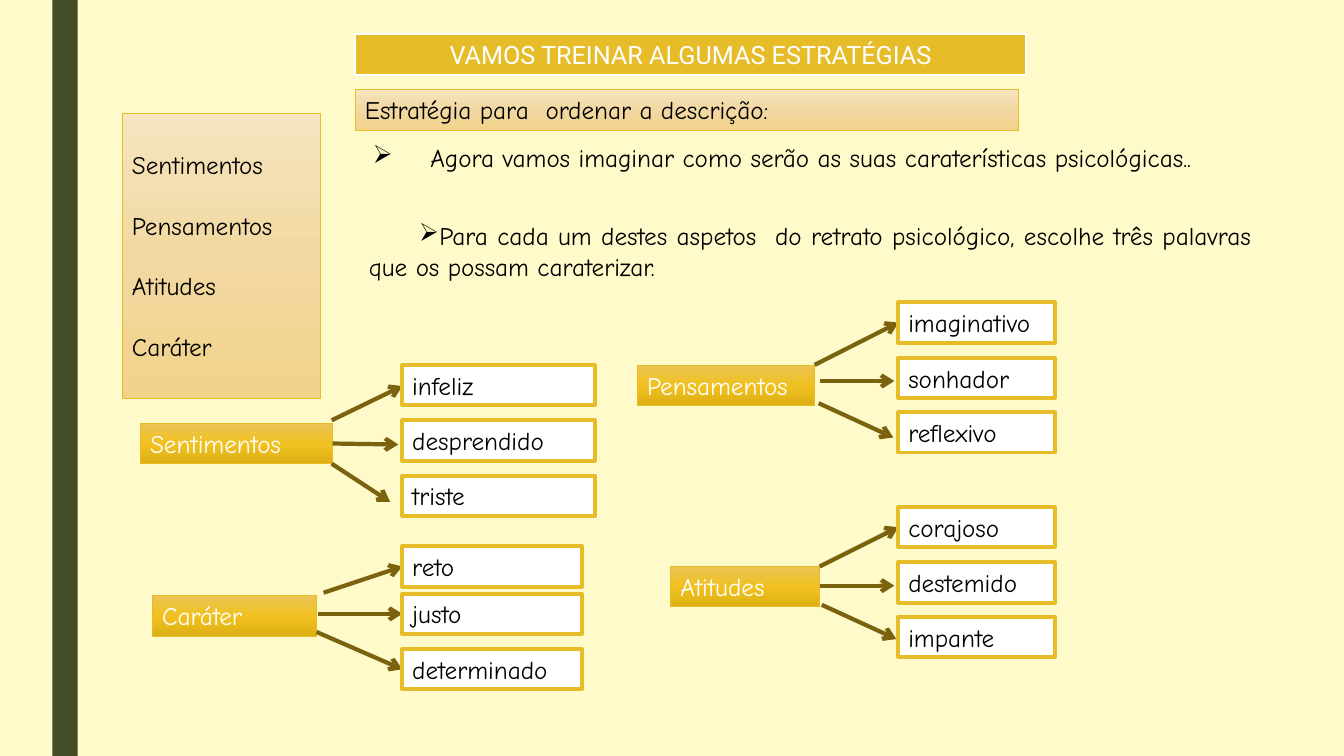
from copy import deepcopy

from lxml.etree import SubElement
from pptx import Presentation
from pptx.dml.color import RGBColor
from pptx.enum.shapes import MSO_CONNECTOR, MSO_SHAPE
from pptx.enum.text import MSO_ANCHOR, PP_ALIGN
from pptx.oxml.ns import qn
from pptx.util import Inches, Pt

CREAM = RGBColor(0xFE, 0xFA, 0xC9)
OLIVE = RGBColor(0x44, 0x4D, 0x26)
GOLD = RGBColor(0xE7, 0xBC, 0x29)
BROWN = RGBColor(0x7A, 0x62, 0x0E)
WHITE = RGBColor(0xFF, 0xFF, 0xFF)
BLACK = RGBColor(0x00, 0x00, 0x00)
PALE_GRADIENT = (RGBColor(0xF6, 0xE5, 0xC0), RGBColor(0xF2, 0xD8, 0xA2), RGBColor(0xF2, 0xD3, 0x8B))
GOLD_GRADIENT = (RGBColor(0xEB, 0xC4, 0x56), RGBColor(0xF0, 0xC1, 0x20), RGBColor(0xDE, 0xB0, 0x14))

BODY_FONT = "Comic Neue"
BOX_HEIGHT = 0.4
ASPECTS = ["Sentimentos", "Pensamentos", "Atitudes", "Caráter"]

# Label, its (left, top, width), the words' left, width and tops, arrow ends
WORD_GROUPS = [
    ("Sentimentos", (1.39, 4.2, 1.91), 3.99, 1.91,
     [("infeliz", 3.62), ("desprendido", 4.17), ("triste", 4.72)],
     [(3.29, 4.17, 3.99, 3.83), (3.3, 4.4, 3.95, 4.41), (3.29, 4.6, 3.87, 4.98)]),
    ("Pensamentos", (6.32, 3.62, 1.76), 8.91, 1.55,
     [("imaginativo", 3), ("sonhador", 3.55), ("reflexivo", 4.09)],
     [(8.08, 3.62, 8.91, 3.2), (8.13, 3.78, 8.87, 3.78), (8.12, 4, 8.86, 4.34)]),
    ("Atitudes", (6.65, 5.62, 1.48), 8.91, 1.55,
     [("corajoso", 5.03), ("destemido", 5.58), ("impante", 6.12)],
     [(8.13, 5.62, 8.91, 5.23), (8.13, 5.81, 8.87, 5.81), (8.15, 6, 8.89, 6.34)]),
    ("Caráter", (1.51, 5.91, 1.63), 3.99, 1.78,
     [("reto", 5.42), ("justo", 5.89), ("determinado", 6.44)],
     [(3.21, 5.88, 3.99, 5.62), (3.15, 6.09, 3.99, 6.09), (3.14, 6.27, 3.99, 6.64)]),
]


def format_paragraph(paragraph, color, font=BODY_FONT, align=PP_ALIGN.LEFT):
    paragraph.alignment = align
    paragraph.font.name = font
    paragraph.font.size = Pt(18)
    paragraph.font.color.rgb = color


def fill_shape(shape, colors):
    """Fill with one colour, or with a downward gradient of three."""
    if len(colors) == 1:
        shape.fill.solid()
        shape.fill.fore_color.rgb = colors[0]
        return
    shape.fill.gradient()
    shape.fill.gradient_angle = 270
    stop_list = shape._element.spPr.find(".//" + qn("a:gsLst"))
    stop_list.insert(1, deepcopy(stop_list[0]))
    for index, (stop, color) in enumerate(zip(shape.fill.gradient_stops, colors)):
        stop.position = index / 2
        stop.color.rgb = color


def add_box(slide, left, top, width, height, lines, colors, line_width, text_color=BLACK):
    shape = slide.shapes.add_shape(
        MSO_SHAPE.RECTANGLE, Inches(left), Inches(top), Inches(width), Inches(height))
    shape.shadow.inherit = False
    fill_shape(shape, colors)
    shape.line.color.rgb = GOLD
    shape.line.width = Pt(line_width)
    text_frame = shape.text_frame
    text_frame.word_wrap = True
    text_frame.vertical_anchor = MSO_ANCHOR.MIDDLE
    text_frame.text = "\n".join(lines)
    for index, paragraph in enumerate(text_frame.paragraphs):
        format_paragraph(paragraph, text_color)
        if index:
            paragraph.space_before = Pt(21.6)


def add_arrow(slide, start_x, start_y, end_x, end_y):
    connector = slide.shapes.add_connector(
        MSO_CONNECTOR.STRAIGHT, Inches(start_x), Inches(start_y), Inches(end_x), Inches(end_y))
    connector.line.color.rgb = BROWN
    connector.line.width = Pt(3)
    SubElement(connector.line._get_or_add_ln(), qn("a:tailEnd"), type="arrow")
    SubElement(connector._element.spPr, qn("a:effectLst"))


def add_bullet_text(slide, left, top, width, height, text, margin, indent, align):
    box = slide.shapes.add_textbox(Inches(left), Inches(top), Inches(width), Inches(height))
    box.text_frame.word_wrap = True
    paragraph = box.text_frame.paragraphs[0]
    paragraph.text = text
    format_paragraph(paragraph, BLACK, align=align)
    properties = paragraph._p.get_or_add_pPr()
    properties.set("marL", str(Inches(margin)))
    properties.set("indent", str(Inches(indent)))
    bullet = SubElement(properties, qn("a:buChar"), char="➢")
    properties.find(qn("a:defRPr")).addprevious(bullet)


def add_title(slide, text):
    title = slide.shapes.title
    title.left, title.top = Inches(3.52), Inches(0.34)
    title.width, title.height = Inches(6.66), Inches(BOX_HEIGHT)
    fill_shape(title, [GOLD])
    title.line.color.rgb = WHITE
    title.line.width = Pt(1.5)
    title.text_frame.text = text
    title.text_frame.vertical_anchor = MSO_ANCHOR.MIDDLE
    format_paragraph(title.text_frame.paragraphs[0], WHITE, "Roboto", PP_ALIGN.CENTER)


def add_word_group(slide, label, label_place, words_left, words_width, words, arrows):
    add_box(slide, *label_place, BOX_HEIGHT, [label], GOLD_GRADIENT, 0.5, WHITE)
    for arrow in arrows:
        add_arrow(slide, *arrow)
    for word, top in words:
        add_box(slide, words_left, top, words_width, BOX_HEIGHT, [word], [WHITE], 2.75)


def main():
    presentation = Presentation()
    presentation.slide_width = Inches(13.33)
    presentation.slide_height = Inches(7.5)
    slide = presentation.slides.add_slide(presentation.slide_layouts.get_by_name("Title Only"))

    # Background and side band
    slide.background.fill.solid()
    slide.background.fill.fore_color.rgb = CREAM
    band = slide.shapes.add_shape(
        MSO_SHAPE.RECTANGLE, Inches(0.52), 0, Inches(0.25), Inches(7.5))
    band.shadow.inherit = False
    fill_shape(band, [OLIVE])
    band.line.fill.background()

    # Headings and list of aspects
    add_title(slide, "VAMOS TREINAR ALGUMAS ESTRATÉGIAS")
    add_box(slide, 3.52, 0.89, 6.58, BOX_HEIGHT,
            ["Estratégia para  ordenar a descrição:"], PALE_GRADIENT, 0.5)
    add_box(slide, 1.21, 1.12, 1.97, 2.83, ASPECTS, PALE_GRADIENT, 0.5)

    # Instructions
    add_bullet_text(slide, 3.6, 1.36, 8.91, 0.4,
                    "Agora vamos imaginar como serão as suas caraterísticas psicológicas..",
                    0.57, -0.57, PP_ALIGN.LEFT)
    add_bullet_text(slide, 3.56, 2.14, 8.95, 0.71,
                    "Para cada um destes aspetos  do retrato psicológico, "
                    "escolhe três palavras que os possam caraterizar.",
                    0, 0.5, PP_ALIGN.JUSTIFY)

    # Aspects with their words
    for group in WORD_GROUPS:
        add_word_group(slide, *group)

    presentation.save("out.pptx")


if __name__ == "__main__":
    main()
